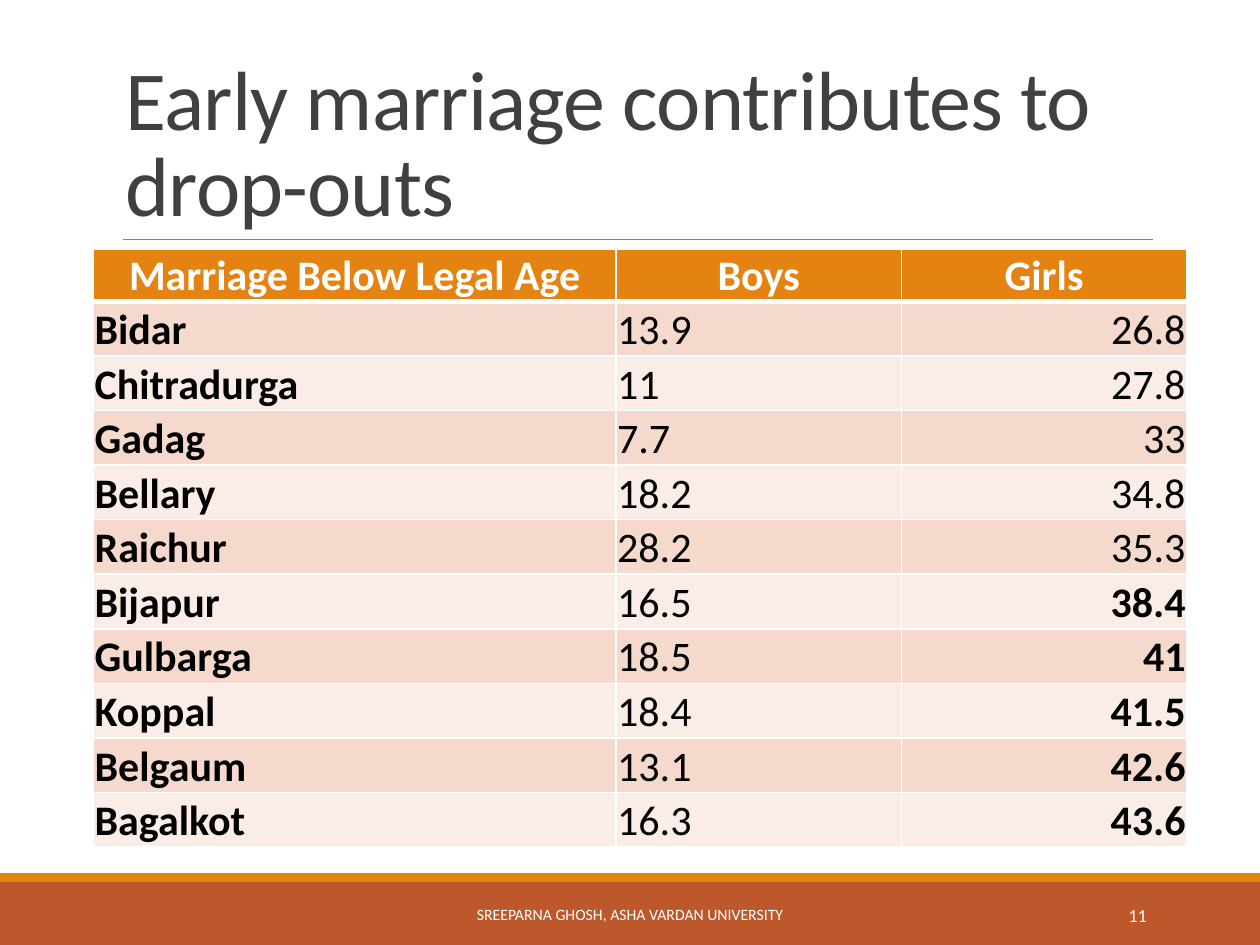
import pptx
import pptx.util
import pptx.dml.color
import pptx.enum.shapes
import pptx.enum.text
import pptx.oxml
import pptx.oxml.ns
import lxml.etree

Pt = pptx.util.Pt
ALIGN = pptx.enum.text.PP_ALIGN
ANCHOR = pptx.enum.text.MSO_ANCHOR
COLOURS = {
    "white": "FFFFFF", "black": "000000", "title": "404040", "rule": "808080",
    "orange": "E48312", "rust": "BD582C", "dark_band": "F5D9CC", "light_band": "FAEDE7",
}


def rgb(name):
    return pptx.dml.color.RGBColor.from_string(COLOURS[name])


def write(text_frame, text, size, colour, align, anchor, bold=False):
    """Put one formatted paragraph in a text frame and return it."""
    text_frame.word_wrap = True
    text_frame.vertical_anchor = anchor
    text_frame.text = text
    paragraph = text_frame.paragraphs[0]
    paragraph.alignment = align
    font = paragraph.runs[0].font
    font.name, font.size, font.bold = "Calibri", Pt(size), bold
    font.color.rgb = rgb(colour)
    return paragraph


presentation = pptx.Presentation()
presentation.slide_width, presentation.slide_height = Pt(720), Pt(540)
slide = presentation.slides.add_slide(presentation.slide_layouts[6])

# Footer bands
for top, height, colour in [(504, 36, "rust"), (499, 5, "orange")]:
    band = slide.shapes.add_shape(
        pptx.enum.shapes.MSO_SHAPE.RECTANGLE, Pt(0), Pt(top), Pt(720), Pt(height))
    band.shadow.inherit = False
    band.fill.solid()
    band.fill.fore_color.rgb = rgb(colour)
    band.line.fill.background()

# Rule under the title
rule = slide.shapes.add_connector(
    pptx.enum.shapes.MSO_CONNECTOR.STRAIGHT, Pt(70.5), Pt(136.8), Pt(658.8), Pt(136.8))
rule.line.color.rgb = rgb("rule")
rule.line.width = Pt(0.5)
lxml.etree.SubElement(rule._element.spPr, pptx.oxml.ns.qn("a:effectLst"))

# Title
title = slide.shapes.add_textbox(Pt(64.8), Pt(22.5), Pt(594), Pt(114.3))
paragraph = write(title.text_frame, "Early marriage contributes to drop-outs",
                  48, "title", ALIGN.LEFT, ANCHOR.BOTTOM)
paragraph.line_spacing = 0.85
paragraph.runs[0]._r.get_or_add_rPr().set("spc", "-50")

# Footer and slide number
for left, width, text, size, align in [
    (217.4, 285.1, "SREEPARNA GHOSH, ASHA VARDAN UNIVERSITY", 9, ALIGN.CENTER),
    (584.6, 77.8, "11", 10.5, ALIGN.RIGHT),
]:
    box = slide.shapes.add_textbox(Pt(left), Pt(508.3), Pt(width), Pt(28.8))
    write(box.text_frame, text, size, "white", align, ANCHOR.MIDDLE)

# Table
rows = [
    ("Marriage Below Legal Age", "Boys", "Girls"),
    ("Bidar", "13.9", "26.8"),
    ("Chitradurga", "11", "27.8"),
    ("Gadag", "7.7", "33"),
    ("Bellary", "18.2", "34.8"),
    ("Raichur", "28.2", "35.3"),
    ("Bijapur", "16.5", "38.4"),
    ("Gulbarga", "18.5", "41"),
    ("Koppal", "18.4", "41.5"),
    ("Belgaum", "13.1", "42.6"),
    ("Bagalkot", "16.3", "43.6"),
]
column_widths = [298.6, 163.3, 162.9]
column_aligns = [ALIGN.LEFT, ALIGN.LEFT, ALIGN.RIGHT]
header_height, row_height = 28.4, 31.2
first_bold_girls_row = 6

table = slide.shapes.add_table(
    len(rows), 3, Pt(53.4), Pt(142.7), Pt(sum(column_widths)),
    Pt(header_height + row_height * (len(rows) - 1))).table
for column, width in zip(table.columns, column_widths):
    column.width = Pt(width)

for row_index, values in enumerate(rows):
    header = row_index == 0
    table.rows[row_index].height = Pt(header_height if header else row_height)
    fill = "orange" if header else "dark_band" if row_index % 2 else "light_band"
    for column_index, value in enumerate(values):
        cell = table.cell(row_index, column_index)
        bold = (header or column_index == 0
                or column_index == 2 and row_index >= first_bold_girls_row)
        write(cell.text_frame, value, 24, "white" if header else "black",
              ALIGN.CENTER if header else column_aligns[column_index], ANCHOR.BOTTOM, bold)
        cell.vertical_anchor = ANCHOR.BOTTOM
        cell.margin_left = cell.margin_right = cell.margin_top = Pt(0.7)
        cell.margin_bottom = Pt(0)
        for side in "LRTB":
            thick = (header and side == "B") or (row_index == 1 and side == "T")
            cell._tc.get_or_add_tcPr().append(pptx.oxml.parse_xml(
                f'<a:ln{side} {pptx.oxml.ns.nsdecls("a")} w="{Pt(3 if thick else 1)}">'
                f'<a:solidFill><a:srgbClr val="{COLOURS["white"]}"/></a:solidFill></a:ln{side}>'))
        cell.fill.solid()
        cell.fill.fore_color.rgb = rgb(fill)

presentation.save("out.pptx")
